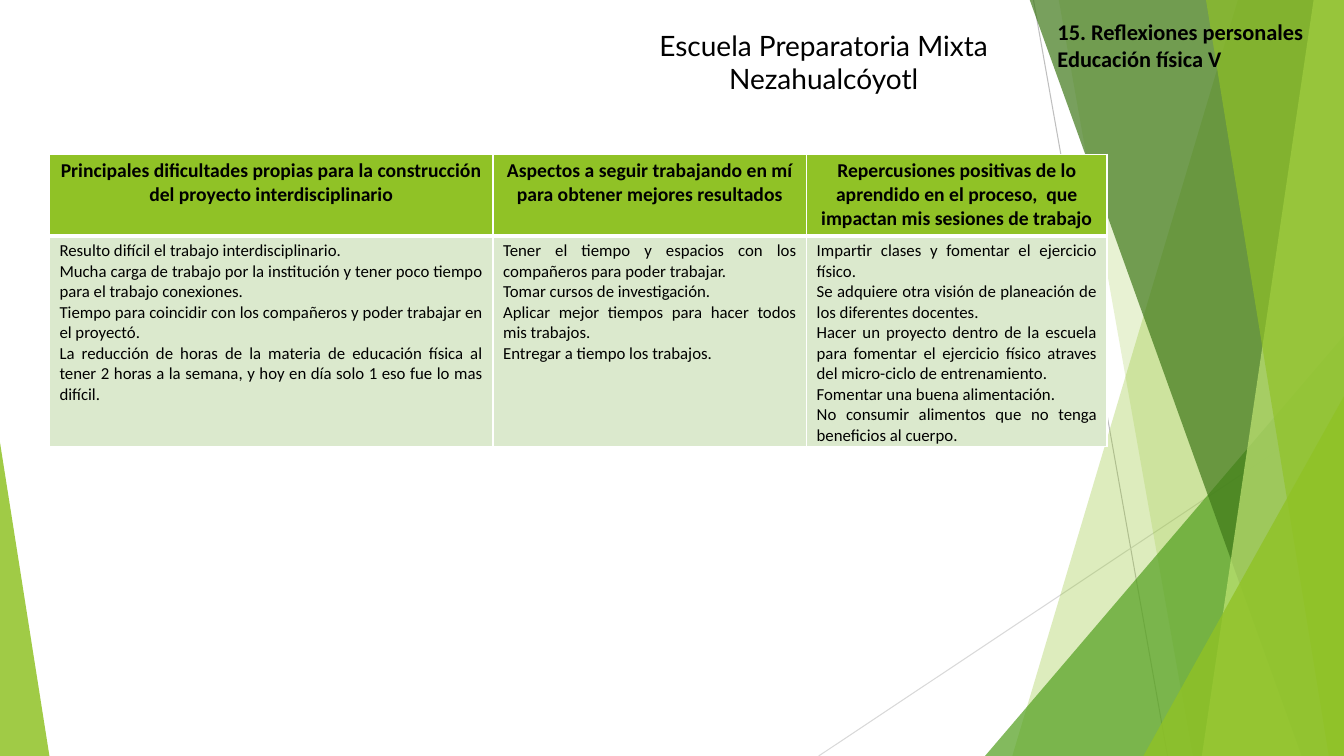
from lxml.etree import SubElement
from pptx import Presentation
from pptx.dml.color import RGBColor
from pptx.enum.shapes import MSO_CONNECTOR, MSO_SHAPE
from pptx.enum.text import MSO_ANCHOR, MSO_AUTO_SIZE, PP_ALIGN
from pptx.oxml import parse_xml
from pptx.oxml.ns import nsdecls, qn
from pptx.util import Inches, Pt

COLORS = {
    "lime": "90C226",
    "green": "54A021",
    "forest": "3F7819",
    "pale": "C0E474",
    "mint": "DBE9CD",
    "gray": "BFBFBF",
    "silver": "D9D9D9",
    "white": "FFFFFF",
    "black": "000000",
}
WIDTH, HEIGHT, BLEED = 13.33, 7.5, -0.01

RAYS = [
    ((10.25, 0), (11.58, HEIGHT), "gray"),
    ((WIDTH, 4.03), (8.12, HEIGHT), "silver"),
]
BACK_BANDS = [(12.28, 10.04, "lime", 30), (10.5, 11.83, "lime", 20)]
FRONT_BANDS = [
    (10.21, 12.91, "forest", 70),
    (13.03, 11.92, "pale", 70),
    (11.96, 13.18, "lime", 65),
]

TITLE = {"size": Pt(20), "name": "Lato", "bold": False}
TOPIC = {"size": Pt(16), "name": "Calibri", "bold": True}
HEADER = {"size": Pt(14), "name": "Calibri", "bold": True}
BODY = {"size": Pt(12), "name": "Calibri", "bold": False}

COLUMNS = [
    (4.4, "Principales dificultades propias para la construcción del proyecto interdisciplinario", [
        "Resulto difícil el trabajo interdisciplinario.",
        "Mucha carga de trabajo por la institución y tener poco tiempo para el trabajo conexiones.",
        "Tiempo para coincidir con los compañeros y poder trabajar en el proyectó.",
        "La reducción de horas de la materia de educación física al tener 2 horas a la semana, "
        "y hoy en día solo 1 eso fue lo mas difícil.",
    ]),
    (3.11, "Aspectos a seguir trabajando en mí para obtener mejores resultados", [
        "Tener el tiempo y espacios con los compañeros para poder trabajar.",
        "Tomar cursos de investigación.",
        "Aplicar mejor tiempos para hacer todos mis trabajos.",
        "Entregar a tiempo los trabajos.",
    ]),
    (2.98, "Repercusiones positivas de lo aprendido en el proceso,  que impactan mis sesiones de trabajo", [
        "Impartir clases y fomentar el ejercicio físico.",
        "Se adquiere otra visión de planeación de los diferentes docentes.",
        "Hacer un proyecto dentro de la escuela para fomentar el ejercicio físico atraves "
        "del micro-ciclo de entrenamiento.",
        "Fomentar una buena alimentación.",
        "No consumir alimentos que no tenga beneficios al cuerpo.",
    ]),
]


def color(name):
    return RGBColor.from_string(COLORS[name])


def apply(target, values):
    for attribute, value in values.items():
        setattr(target, attribute, value)


def write(frame, lines, style, align):
    frame.text = "\n".join(lines)
    for paragraph in frame.paragraphs:
        paragraph.alignment = align
        for run in paragraph.runs:
            apply(run.font, style)
            run.font.color.rgb = color("black")


def place(box, left, top, width, height):
    apply(box, {"left": Inches(left), "top": Inches(top),
                "width": Inches(width), "height": Inches(height)})
    apply(box.text_frame, {"word_wrap": True, "auto_size": MSO_AUTO_SIZE.NONE,
                           "vertical_anchor": MSO_ANCHOR.TOP})


def tint(facet, name, opacity):
    facet.shadow.inherit = False
    facet.line.fill.background()
    facet.fill.solid()
    facet.fill.fore_color.rgb = color(name)
    swatch = facet.fill._xPr.find(qn("a:solidFill"))[0]
    SubElement(swatch, qn("a:alpha"), val=str(opacity * 1000))


def add_ray(slide, start, end, name):
    ray = slide.shapes.add_connector(
        MSO_CONNECTOR.STRAIGHT, *(Inches(value) for value in (*start, *end)))
    ray.line.color.rgb = color(name)
    ray.line.width = Pt(0.75)
    SubElement(ray._element.spPr, qn("a:effectLst"))


def add_band(slide, top_x, bottom_x, name, opacity):
    corners = [(WIDTH, BLEED), (WIDTH, HEIGHT), (bottom_x, HEIGHT)]
    builder = slide.shapes.build_freeform(Inches(top_x), Inches(BLEED))
    builder.add_line_segments([(Inches(x), Inches(y)) for x, y in corners], close=True)
    tint(builder.convert_to_shape(), name, opacity)


def add_triangle(slide, left, top, width, apex, name, opacity):
    triangle = slide.shapes.add_shape(
        MSO_SHAPE.ISOSCELES_TRIANGLE, Inches(left), Inches(top),
        Inches(width), Inches(HEIGHT - top))
    triangle.adjustments[0] = apex
    tint(triangle, name, opacity)


def add_decoration(slide):
    for ray in RAYS:
        add_ray(slide, *ray)
    for band in BACK_BANDS:
        add_band(slide, *band)
    add_triangle(slide, 9.77, 3.33, 3.56, 1, "green", 72)
    for band in FRONT_BANDS:
        add_band(slide, *band)
    add_triangle(slide, 11.34, 3.93, 1.99, 1, "lime", 80)
    add_triangle(slide, 0, 4.39, 0.49, 0, "lime", 85)


def format_cell(cell, lines, style, align, fill, borders):
    write(cell.text_frame, lines, style, align)
    cell.fill.solid()
    cell.fill.fore_color.rgb = color(fill)
    properties = cell._tc.get_or_add_tcPr()
    for index, (side, points) in enumerate(borders.items()):
        properties.insert(index, parse_xml(
            f'<a:ln{side} {nsdecls("a")} w="{Pt(points)}"><a:solidFill>'
            f'<a:srgbClr val="{COLORS["white"]}"/></a:solidFill></a:ln{side}>'))


def add_reflections(slide):
    table = slide.shapes.add_table(
        2, len(COLUMNS), Inches(0.49), Inches(1.53), Inches(10.49), Inches(2.9)).table
    apply(table, {"first_row": True, "horz_banding": False})
    for row, height in zip(table.rows, (0.81, 2.09)):
        row.height = Inches(height)
    for index, (width, heading, reflections) in enumerate(COLUMNS):
        table.columns[index].width = Inches(width)
        format_cell(table.cell(0, index), [heading], HEADER, PP_ALIGN.CENTER,
                    "lime", {"L": 1, "R": 1, "T": 1, "B": 3})
        body = table.cell(1, index)
        body.margin_bottom = 0
        format_cell(body, reflections, BODY, PP_ALIGN.JUSTIFY,
                    "mint", {"L": 1, "R": 1, "T": 3, "B": 1})


def main():
    deck = Presentation()
    apply(deck, {"slide_width": Inches(WIDTH), "slide_height": Inches(HEIGHT)})
    slide = deck.slides.add_slide(deck.slide_layouts[5])
    add_decoration(slide)

    school = slide.shapes.title
    place(school, 5.51, 0.23, 5.32, 0.77)
    write(school.text_frame, ["Escuela Preparatoria Mixta Nezahualcóyotl"],
          TITLE, PP_ALIGN.CENTER)

    topic = slide.shapes.add_textbox(0, 0, 0, 0)
    place(topic, 10.39, 0.13, 2.76, 0.64)
    write(topic.text_frame, ["15. Reflexiones personales", "Educación física V"],
          TOPIC, PP_ALIGN.LEFT)

    add_reflections(slide)
    deck.save("out.pptx")


if __name__ == "__main__":
    main()
